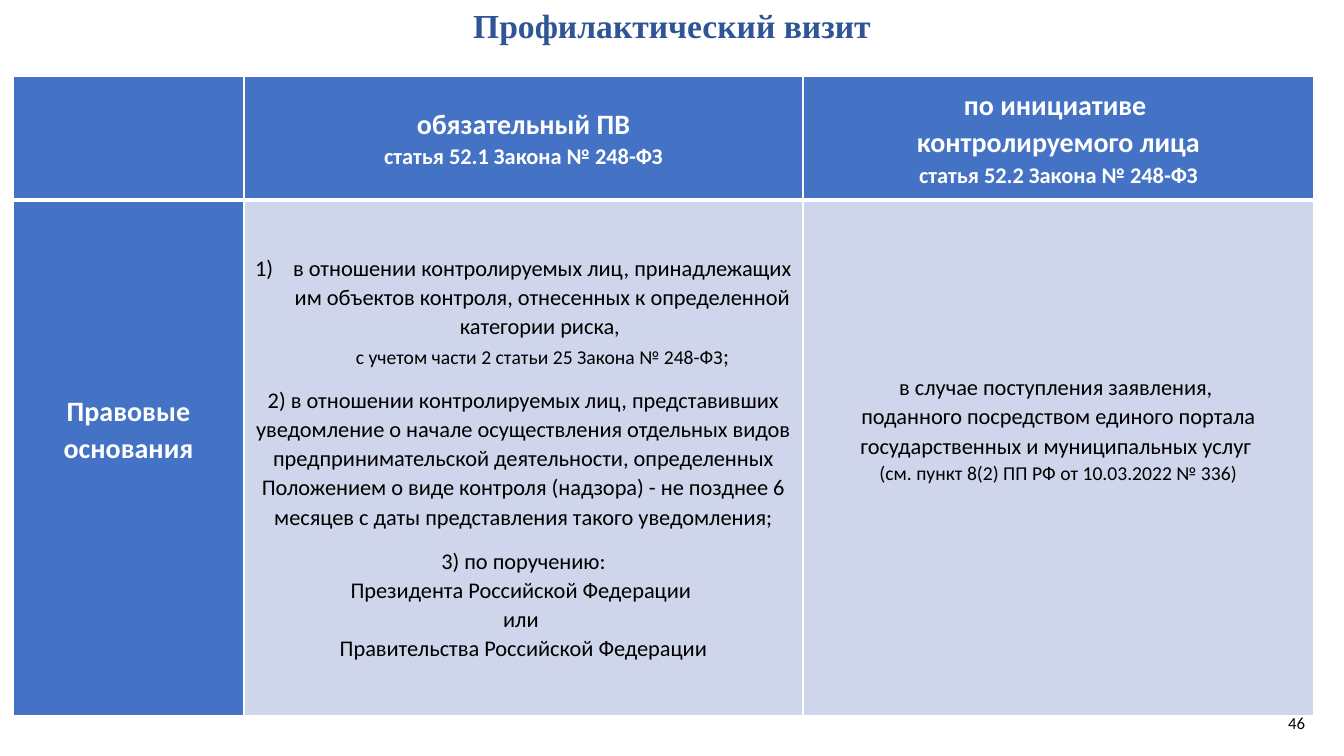
"""Build the slide that compares the two kinds of preventive visit."""
import dataclasses
import typing

import lxml.etree
import pptx
import pptx.dml.color
import pptx.enum.text
import pptx.oxml.ns
import pptx.util

EMU_PER_PX = 914400 / 100.8
COLORS = {"title": "2F5597", "header": "4472C4", "body": "CFD5EA", "white": "FFFFFF", "black": "000000"}
ALIGN = pptx.enum.text.PP_ALIGN
MIDDLE = pptx.enum.text.MSO_ANCHOR.MIDDLE


@dataclasses.dataclass(frozen=True)
class Line:
    """One paragraph, with its runs given as pairs of text and size."""
    runs: tuple[tuple[str, int], ...]
    space_before: float = 0
    left: int = 0
    numbered: bool = False


@dataclasses.dataclass(frozen=True)
class CellText:
    """The content of one table cell."""
    lines: tuple[Line, ...] = ()
    bottom: int = 0


def line(text: str, size: int = 16, space_before: float = 0) -> Line:
    """Return a paragraph with a single run."""
    return Line(((text, size),), space_before)


COLUMN_WIDTHS = (231, 559, 511)
ROW_HEIGHTS = (124, 516)
GAP = 10.4
LIST_INDENT = 38
GRID = (
    (
        CellText(),
        CellText((line("обязательный ПВ", 20), line("статья 52.1 Закона № 248-ФЗ"))),
        CellText((
            line("по инициативе ", 20),
            line("контролируемого лица", 20),
            line("статья 52.2 Закона № 248-ФЗ"),
        )),
    ),
    (
        CellText((line("Правовые основания", 20),), bottom=58),
        CellText((
            Line(((
                "в отношении контролируемых лиц, принадлежащих им объектов контроля, "
                "отнесенных к определенной категории риска, ", 16),), left=LIST_INDENT, numbered=True),
            Line((("с учетом части 2 статьи 25 Закона № 248-ФЗ", 14), (";", 16)), left=LIST_INDENT),
            line(
                "2) в отношении контролируемых лиц, представивших уведомление о начале "
                "осуществления отдельных видов предпринимательской деятельности, определенных "
                "Положением о виде контроля (надзора) - не позднее 6 месяцев с даты "
                "представления такого уведомления;", space_before=GAP),
            line("3) по поручению:", space_before=GAP),
            line("Президента Российской Федерации "),
            line("или "),
            line("Правительства Российской Федерации"),
        )),
        CellText((
            line("в случае поступления заявления, "),
            line("поданного посредством единого портала государственных и муниципальных услуг "),
            line("(см. пункт 8(2) ПП РФ от 10.03.2022 № 336)", 14),
        ), bottom=58),
    ),
)


def px(length: int) -> pptx.util.Emu:
    """Turn pixels into EMU."""
    return pptx.util.Emu(round(length * EMU_PER_PX))


def apply(target: typing.Any, values: dict[str, typing.Any]) -> None:
    """Set each named attribute on the target."""
    for name, value in values.items():
        setattr(target, name, value)


def add_run(paragraph: typing.Any, text: str, size: int, color: str,
            bold: bool = False, font: str = "Calibri") -> None:
    """Add a formatted run to a paragraph."""
    run = paragraph.add_run()
    run.text = text
    apply(run.font, {"size": pptx.util.Pt(size), "name": font, "bold": bold})
    run.font.color.rgb = pptx.dml.color.RGBColor.from_string(COLORS[color])


def add_child(parent: typing.Any, tag: str, **attributes: str) -> typing.Any:
    """Append a DrawingML element."""
    return lxml.etree.SubElement(parent, pptx.oxml.ns.qn(tag), attributes)


def add_borders(cell: typing.Any, row: int) -> None:
    """Draw white borders, with a thick one under the header row."""
    properties = cell._tc.get_or_add_tcPr()
    thick_side = "B" if row == 0 else "T"
    for side in "LRTB":
        width = pptx.util.Pt(3 if side == thick_side else 1)
        border = add_child(properties, f"a:ln{side}", w=str(width))
        add_child(add_child(border, "a:solidFill"), "a:srgbClr", val=COLORS["white"])


def fill_cell(cell: typing.Any, content: CellText, row: int, column: int) -> None:
    """Format a cell and write its paragraphs."""
    is_header = row == 0 or column == 0
    add_borders(cell, row)
    cell.fill.solid()
    cell.fill.fore_color.rgb = pptx.dml.color.RGBColor.from_string(COLORS["header" if is_header else "body"])
    apply(cell, {"vertical_anchor": MIDDLE, "margin_left": px(7), "margin_right": px(7),
                 "margin_top": 0, "margin_bottom": px(content.bottom)})
    for index, item in enumerate(content.lines):
        frame = cell.text_frame
        paragraph = frame.add_paragraph() if index else frame.paragraphs[0]
        apply(paragraph, {"alignment": ALIGN.CENTER, "line_spacing": 1.07,
                          "space_before": pptx.util.Pt(item.space_before)})
        if item.left:
            properties = paragraph._p.get_or_add_pPr()
            properties.set("marL", str(px(item.left)))
            properties.set("indent", str(px(-item.left if item.numbered else 0)))
            if item.numbered:
                add_child(properties, "a:buAutoNum", type="arabicParenR")
        for text, size in item.runs:
            add_run(paragraph, text, size, "white" if is_header else "black", is_header)


def add_title(slide: typing.Any) -> None:
    """Place and format the title placeholder."""
    title = slide.shapes.title
    apply(title, {"left": 0, "top": px(17), "width": px(1344), "height": px(59)})
    apply(title.text_frame, {"vertical_anchor": MIDDLE, "word_wrap": True, "margin_top": 0,
                             "margin_bottom": px(37), "auto_size": pptx.enum.text.MSO_AUTO_SIZE.NONE})
    paragraph = title.text_frame.paragraphs[0]
    apply(paragraph, {"alignment": ALIGN.CENTER, "line_spacing": 0.9})
    add_run(paragraph, "Профилактический визит", 24, "title", True, "Times New Roman")


def add_page_number(slide: typing.Any) -> None:
    """Write the page number in the lower right corner."""
    box = slide.shapes.add_textbox(px(1239), px(703), px(76), px(40))
    apply(box.text_frame, {"vertical_anchor": MIDDLE, "word_wrap": True})
    paragraph = box.text_frame.paragraphs[0]
    paragraph.alignment = ALIGN.RIGHT
    add_run(paragraph, "46", 12, "black")


def add_visit_table(slide: typing.Any) -> None:
    """Add the table of visit kinds and their legal grounds."""
    table = slide.shapes.add_table(
        len(ROW_HEIGHTS), len(COLUMN_WIDTHS), px(13), px(76),
        px(sum(COLUMN_WIDTHS)), px(sum(ROW_HEIGHTS))).table
    for column, width in zip(table.columns, COLUMN_WIDTHS):
        column.width = px(width)
    for row, height in zip(table.rows, ROW_HEIGHTS):
        row.height = px(height)
    for row_index, contents in enumerate(GRID):
        for column_index, content in enumerate(contents):
            fill_cell(table.cell(row_index, column_index), content, row_index, column_index)


def main() -> None:
    """Build and save the presentation."""
    presentation = pptx.Presentation()
    apply(presentation, {"slide_width": px(1344), "slide_height": px(756)})
    slide = presentation.slides.add_slide(presentation.slide_layouts[5])
    add_title(slide)
    add_page_number(slide)
    add_visit_table(slide)
    presentation.save("out.pptx")


if __name__ == "__main__":
    main()
